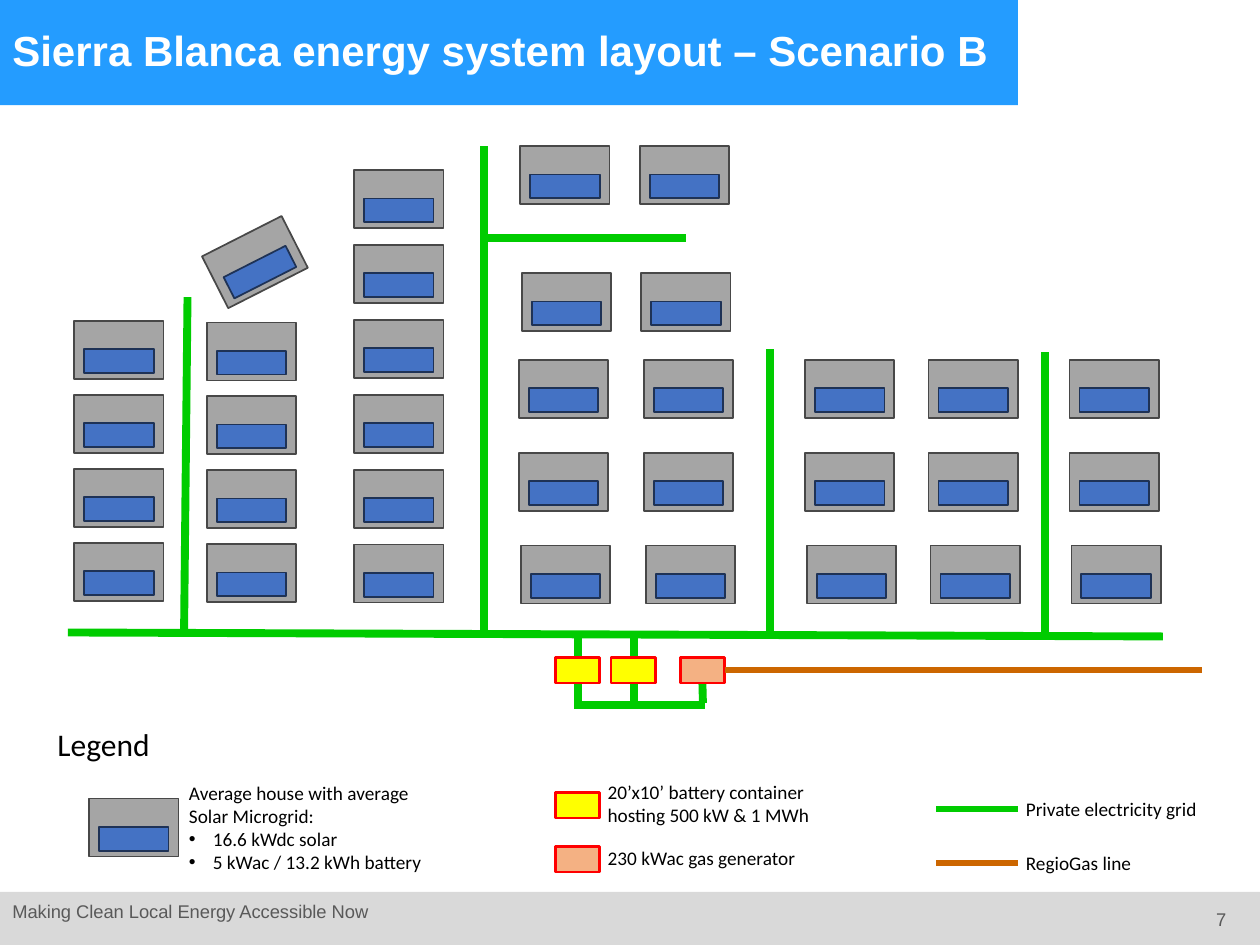
from dataclasses import dataclass

from lxml import etree
from pptx import Presentation
from pptx.dml.color import RGBColor
from pptx.enum.shapes import MSO_CONNECTOR, MSO_SHAPE
from pptx.enum.text import MSO_ANCHOR, PP_ALIGN
from pptx.oxml.ns import qn
from pptx.util import Cm, Pt

RECTANGLE = MSO_SHAPE.RECTANGLE
STRAIGHT = MSO_CONNECTOR.STRAIGHT
TOP, MIDDLE = MSO_ANCHOR.TOP, MSO_ANCHOR.MIDDLE
LEFT, RIGHT = PP_ALIGN.LEFT, PP_ALIGN.RIGHT


@dataclass(frozen=True)
class Theme:
    heading_font: str = "Arial"
    body_font: str = "Calibri"
    title_size: float = 24
    legend_title_size: float = 18
    label_size: float = 11
    footer_size: float = 10.5
    white: str = "FFFFFF"
    black: str = "000000"
    header: str = "249CFF"
    footer: str = "D9D9D9"
    footer_text: str = "595959"
    house: str = "A5A5A5"
    house_line: str = "484848"
    solar: str = "4472C4"
    solar_line: str = "1E3256"
    battery: str = "FFFF00"
    generator: str = "F4B183"
    plant_line: str = "FF0000"
    grid: str = "00CC00"
    gas: str = "CC6600"
    grid_width: float = 4.5
    thin_width: float = 3.5


THEME = Theme()
HOUSE_WIDTH, HOUSE_HEIGHT = 1.8, 1.17
UNIT_WIDTH, UNIT_HEIGHT = 0.89, 0.51


def add_rectangle(parent, left, top, width, height, fill, line=None, weight=1):
    shape = parent.shapes.add_shape(RECTANGLE, Cm(left), Cm(top), Cm(width), Cm(height))
    shape.shadow.inherit = False
    shape.fill.solid()
    shape.fill.fore_color.rgb = RGBColor.from_string(fill)
    if line:
        shape.line.color.rgb = RGBColor.from_string(line)
        shape.line.width = Pt(weight)
    else:
        shape.line.fill.background()
    return shape


def add_line(slide, start, end, color, weight):
    points = [Cm(value) for value in (*start, *end)]
    connector = slide.shapes.add_connector(STRAIGHT, *points)
    connector.line.color.rgb = RGBColor.from_string(color)
    connector.line.width = Pt(weight)
    properties = connector._element.find(qn("p:spPr"))
    etree.SubElement(properties, qn("a:effectLst"))


def add_bullet(paragraph):
    properties = paragraph._p.get_or_add_pPr()
    properties.set("marL", str(Cm(0.48)))
    properties.set("indent", str(-Cm(0.48)))
    etree.SubElement(properties, qn("a:buFont")).set("typeface", "Arial")
    etree.SubElement(properties, qn("a:buChar")).set("char", "•")


def add_text(slide, left, top, width, height, lines, size=THEME.label_size,
             color=THEME.black, font=THEME.body_font, bold=False,
             align=LEFT, anchor=TOP, bullets_from=None):
    box = slide.shapes.add_textbox(Cm(left), Cm(top), Cm(width), Cm(height))
    frame = box.text_frame
    frame.word_wrap = True
    frame.vertical_anchor = anchor
    frame.text = "\n".join(lines)
    for index, paragraph in enumerate(frame.paragraphs):
        if bullets_from is not None and index >= bullets_from:
            add_bullet(paragraph)
        paragraph.alignment = align
        paragraph.font.name = font
        paragraph.font.size = Pt(size)
        paragraph.font.bold = bold
        paragraph.font.color.rgb = RGBColor.from_string(color)
    return box


def add_house(slide, left, top, rotation=0):
    house = slide.shapes.add_group_shape()
    add_rectangle(house, left, top, HOUSE_WIDTH, HOUSE_HEIGHT, THEME.house, THEME.house_line)
    add_rectangle(house, left + 0.2, top + 0.57, 1.4, 0.48, THEME.solar, THEME.solar_line)
    if rotation:
        frame = add_rotation_frame(house, left, top)
        frame.rotation = rotation


def add_rotation_frame(house, left, top):
    house.left, house.top = Cm(left), Cm(top)
    house.width, house.height = Cm(HOUSE_WIDTH), Cm(HOUSE_HEIGHT)
    return house


def add_unit(slide, left, top, fill):
    add_rectangle(slide, left, top, UNIT_WIDTH, UNIT_HEIGHT, fill, THEME.plant_line, 1.5)


def add_header(slide, left, top, width, height):
    add_rectangle(slide, left, top, width, height, THEME.header)
    title = add_text(slide, left, top, width - 0.2, height,
                     ["Sierra Blanca energy system layout – Scenario B"],
                     THEME.title_size, THEME.white, THEME.heading_font, True, anchor=MIDDLE)
    title.text_frame.paragraphs[0].line_spacing = 0.9


def add_footer(slide, left, top, width, height):
    add_rectangle(slide, left, top, width, height, THEME.footer)
    style = (THEME.footer_size, THEME.footer_text, THEME.heading_font)
    add_text(slide, left, top + 0.05, 13.13, 0.71,
             ["Making Clean Local Energy Accessible Now"], *style)
    add_text(slide, left + width - 2.03, top + 0.2, 1.6, 1.02, ["7"], *style, align=RIGHT)


def add_site_map(slide, left, top):
    def draw_lines(segments, color, weight):
        for x1, y1, x2, y2 in segments:
            add_line(slide, (left + x1, top + y1), (left + x2, top + y2), color, weight)

    plant_links = [(12.8, 11.22, 12.78, 10.41), (11.41, 11.22, 11.41, 9.88),
                   (10.29, 11.22, 10.29, 9.88), (10.21, 11.27, 12.85, 11.27)]
    feeders = [(0, 9.8, 22.07, 9.88), (14.15, 9.8, 14.15, 4.09),
               (2.34, 9.83, 2.41, 3.04), (8.38, 9.88, 8.38, 0),
               (12.45, 1.85, 8.43, 1.85), (19.69, 9.85, 19.69, 4.14)]
    draw_lines(plant_links + feeders, THEME.grid, THEME.grid_width)

    for x, first_y, step, count in [(0.13, 3.52, 1.49, 4), (2.8, 3.55, 1.49, 4),
                                    (5.77, 0.48, 1.51, 6)]:
        for row in range(count):
            add_house(slide, left + x, top + first_y + row * step)
    add_house(slide, left + 2.87, top + 1.75, 333.1)

    lots = (9.09, 11.61, 14.86, 17.35, 20.19)
    north_lots = (9.12, 11.53)
    for y, columns, shift in [(0, north_lots, 0), (2.56, north_lots, 0.03),
                              (4.31, lots, 0), (6.18, lots, 0), (8.05, lots, 0.04)]:
        for x in columns:
            add_house(slide, left + x + shift, top + y)

    for x, fill in [(9.83, THEME.battery), (10.95, THEME.battery), (12.35, THEME.generator)]:
        add_unit(slide, left + x, top + 10.31, fill)
    draw_lines([(22.86, 10.56, 13.24, 10.56)], THEME.gas, THEME.thin_width)


def add_legend(slide, left, top):
    add_text(slide, left, top, 2.62, 1.02, ["Legend"], THEME.legend_title_size)

    add_house(slide, left + 0.89, top + 1.6)
    add_text(slide, left + 2.65, top + 1.12, 5.38, 2.13,
             ["Average house with average Solar Microgrid:", "16.6 kWdc solar",
              "5 kWac / 13.2 kWh battery"], bullets_from=1)

    for unit_y, text_y, height, fill, label in [
        (1.48, 1.1, 1.19, THEME.battery, "20’x10’ battery container hosting 500 kW & 1 MWh"),
        (2.57, 2.44, 0.74, THEME.generator, "230 kWac gas generator"),
    ]:
        add_unit(slide, left + 10.29, top + unit_y, fill)
        add_text(slide, left + 11.09, top + text_y, 4.95, height, [label])

    for y, color, label in [(1.81, THEME.grid, "Private electricity grid"),
                            (2.9, THEME.gas, "RegioGas line")]:
        add_line(slide, (left + 17.96, top + y), (left + 19.61, top + y),
                 color, THEME.thin_width)
        add_text(slide, left + 19.52, top + y - 0.36, 4.39, 0.74, [label])


def main():
    presentation = Presentation()
    presentation.slide_width, presentation.slide_height = Cm(25.4), Cm(19.05)
    slide = presentation.slides.add_slide(presentation.slide_layouts[6])
    add_footer(slide, 0, 17.98, 25.4, 1.07)
    add_header(slide, 0, 0, 20.52, 2.12)
    add_site_map(slide, 1.37, 2.95)
    add_legend(slide, 0.91, 14.5)
    presentation.save("out.pptx")


if __name__ == "__main__":
    main()
